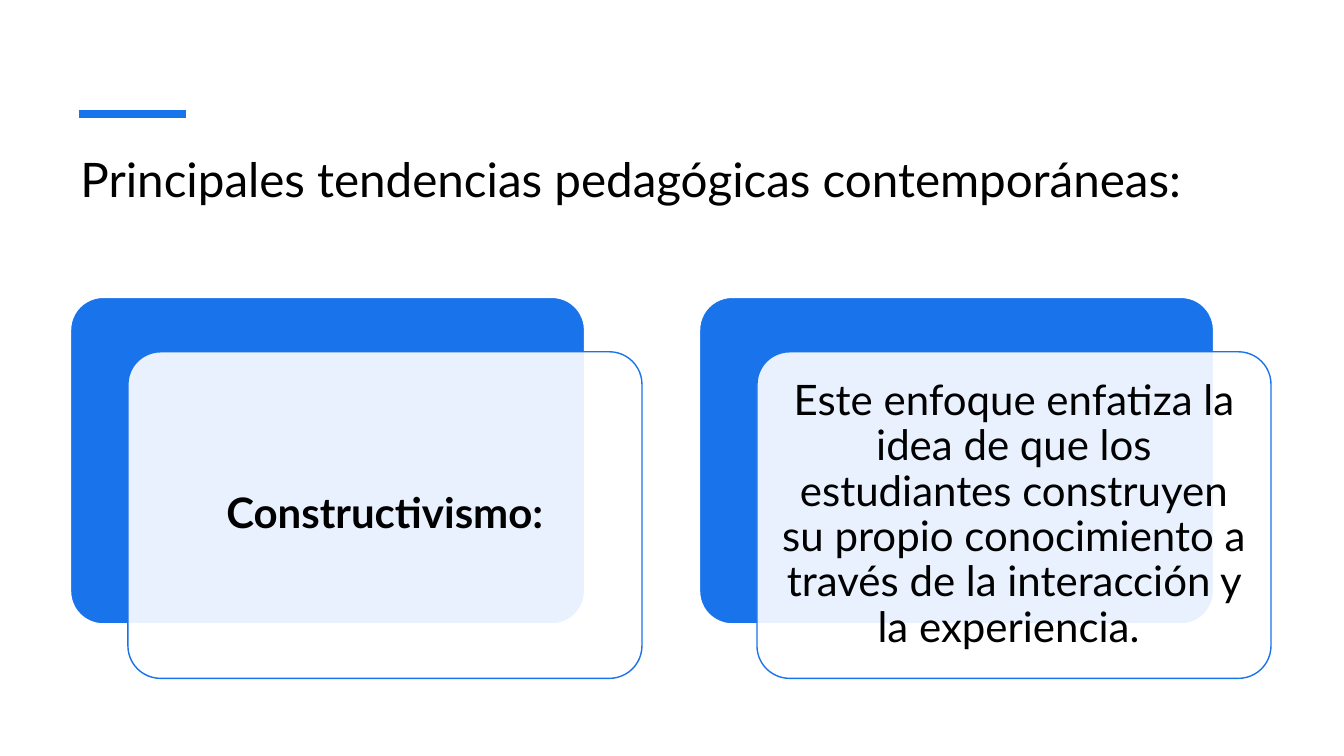
"""Builds the slide on contemporary pedagogical trends with two layered cards."""
from lxml import etree
from pptx import Presentation
from pptx import util as u
from pptx.dml.color import RGBColor
from pptx.enum import shapes, text
from pptx.oxml.ns import qn

COLORS = {"blue": "1973EB", "white": "FFFFFF", "black": "000000"}
CARD_WIDTH, CARD_HEIGHT = 367.2, 233.3
CARD_LEFT, CARD_TOP, CARD_STEP = 50.4, 212.4, 449.3
FRONT_SHIFT_X, FRONT_SHIFT_Y = 41, 38.9
TEXT_MARGIN = 6.8
CARDS = [
    ("Constructivismo:", True),
    ("Este enfoque enfatiza la idea de que los estudiantes construyen su propio "
     "conocimiento a través de la interacción y la experiencia. ", False),
]


def add_panel(left, top, fill, line):
    panel = page.shapes.add_shape(
        shapes.MSO_SHAPE.ROUNDED_RECTANGLE,
        u.Pt(left), u.Pt(top), u.Pt(CARD_WIDTH), u.Pt(CARD_HEIGHT))
    panel.adjustments[0] = 0.1
    panel.shadow.inherit = False
    panel.fill.solid()
    panel.fill.fore_color.rgb = RGBColor.from_string(COLORS[fill])
    panel.line.color.rgb = RGBColor.from_string(COLORS[line])
    panel.line.width = u.Pt(1)
    return panel


def add_text(left, top, width, height, words, size, bold=False):
    box = page.shapes.add_textbox(u.Pt(left), u.Pt(top), u.Pt(width), u.Pt(height))
    box.text_frame.word_wrap = True
    para = box.text_frame.paragraphs[0]
    para.line_spacing = 0.9
    span = para.add_run()
    span.text = words
    span.font.name = "Lato"
    span.font.size = u.Pt(size)
    span.font.bold = bold
    span.font.color.rgb = RGBColor.from_string(COLORS["black"])
    return box


deck = Presentation()
deck.slide_width, deck.slide_height = u.Pt(960), u.Pt(540)
page = deck.slides.add_slide(deck.slide_layouts[6])

add_text(50.4, 108, 857.5, 86.4, "Principales tendencias pedagógicas contemporáneas:", 34)

accent = page.shapes.add_connector(
    shapes.MSO_CONNECTOR.STRAIGHT, u.Pt(56.2), u.Pt(81.4), u.Pt(133.2), u.Pt(81.4))
accent.line.color.rgb = RGBColor.from_string(COLORS["blue"])
accent.line.width = u.Pt(6)
etree.SubElement(accent._element.spPr, qn("a:effectLst"))

for index, (words, bold) in enumerate(CARDS):
    left = CARD_LEFT + index * CARD_STEP
    front_left, front_top = left + FRONT_SHIFT_X, CARD_TOP + FRONT_SHIFT_Y
    add_panel(left, CARD_TOP, "blue", "white")
    front = add_panel(front_left, front_top, "white", "blue")
    tint = front._element.spPr.find(qn("a:solidFill")).find(qn("a:srgbClr"))
    etree.SubElement(tint, qn("a:alpha"), val="90000")

    box = add_text(front_left + TEXT_MARGIN, front_top + TEXT_MARGIN,
                   CARD_WIDTH - 2 * TEXT_MARGIN, CARD_HEIGHT - 2 * TEXT_MARGIN,
                   words, 30, bold)
    frame = box.text_frame
    frame.vertical_anchor = text.MSO_ANCHOR.MIDDLE
    frame.margin_left = frame.margin_right = u.Pt(8.64)
    frame.margin_top = frame.margin_bottom = u.Pt(8.64)
    frame.paragraphs[0].alignment = text.PP_ALIGN.CENTER

deck.save("out.pptx")
